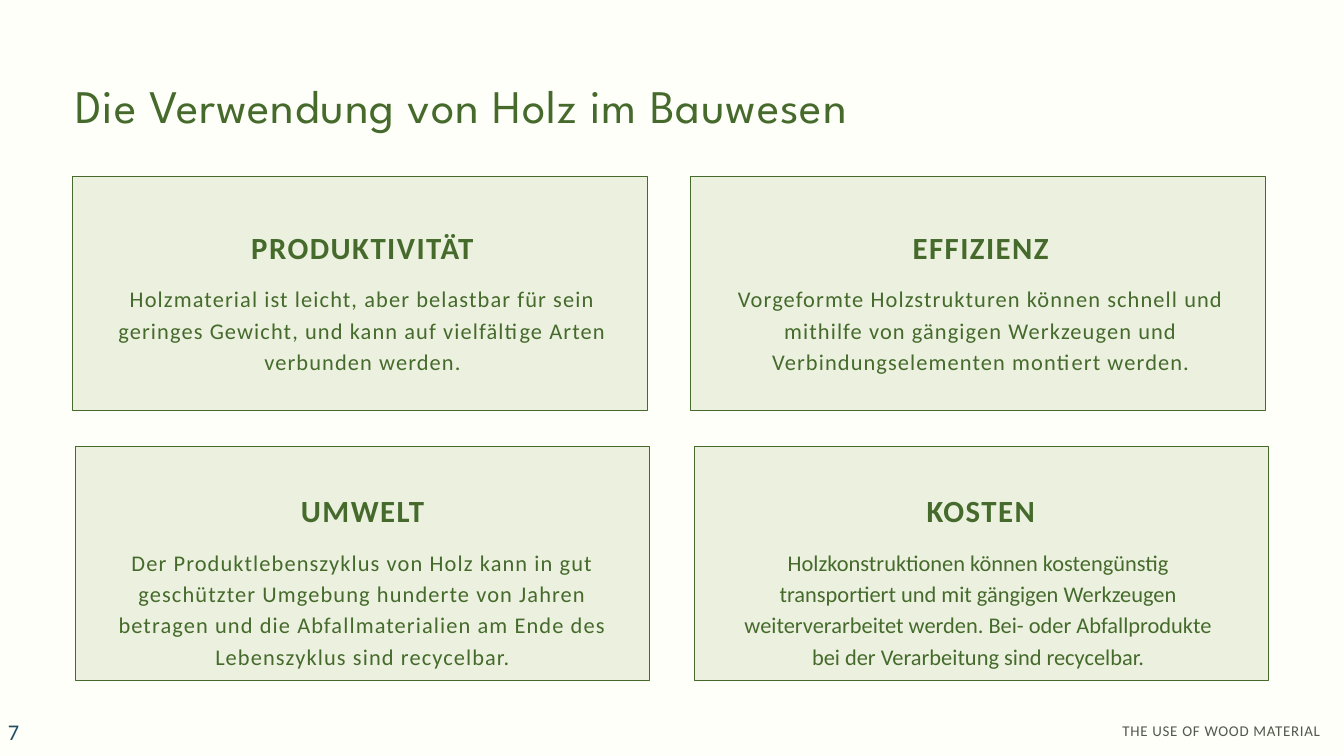
from pptx import Presentation
from pptx.dml.color import RGBColor
from pptx.enum.shapes import MSO_SHAPE
from pptx.enum.text import MSO_ANCHOR, MSO_AUTO_SIZE, PP_ALIGN
from pptx.util import Inches, Pt

RECTANGLE = MSO_SHAPE.RECTANGLE
TOP, MIDDLE = MSO_ANCHOR.TOP, MSO_ANCHOR.MIDDLE
LEFT, CENTER, RIGHT = PP_ALIGN.LEFT, PP_ALIGN.CENTER, PP_ALIGN.RIGHT
NO_AUTOSIZE = MSO_AUTO_SIZE.NONE
TITLE_ONLY = 5

COLORS = {
    "background": "FEFFF8",
    "green": "456A2C",
    "card": "EBF1DE",
    "footer": "52584D",
    "number": "1E4D65",
}
BODY_FONT = "Calibri"
TITLE_FONT = "League Spartan"

CARD_WIDTH, CARD_HEIGHT = 8.55, 3.48
TEXT_WIDTH = 7.39
HEADING_HEIGHT = 0.56
BODY_OFFSET = 0.8

CARDS = [
    {"box": (1.12, 6.64), "inset": (0.58, 0.66), "heading": "UMWELT",
     "body": "Der Produktlebenszyklus von Holz kann in gut geschützter Umgebung "
             "hunderte von Jahren betragen und die Abfallmaterialien am Ende des "
             "Lebenszyklus sind recycelbar."},
    {"box": (1.08, 2.62), "inset": (0.62, 0.76), "heading": "PRODUKTIVITÄT",
     "body": "Holzmaterial ist leicht, aber belastbar für sein geringes Gewicht, "
             "und kann auf vielfältige Arten verbunden werden."},
    {"box": (10.28, 2.62), "inset": (0.62, 0.76), "heading": "EFFIZIENZ",
     "body": "Vorgeformte Holzstrukturen können schnell und mithilfe von gängigen "
             "Werkzeugen und Verbindungselementen montiert werden."},
    {"box": (10.33, 6.64), "inset": (0.57, 0.66), "heading": "KOSTEN",
     "body": "Holzkonstruktionen können kostengünstig transportiert und mit gängigen "
             "Werkzeugen weiterverarbeitet werden. Bei- oder Abfallprodukte bei der "
             "Verarbeitung sind recycelbar.",
     "body_shift": -0.04, "body_tracking": 0},
]


def color(name):
    """Return the named colour."""
    return RGBColor.from_string(COLORS[name])


def write_text(shape, text, *, size, font=BODY_FONT, fill="green", bold=False,
               align=LEFT, anchor=TOP, leading=None, tracking=0, margins=(0, 0)):
    """Put one formatted paragraph into a shape."""
    frame = shape.text_frame
    frame.word_wrap = True
    frame.auto_size = NO_AUTOSIZE
    frame.vertical_anchor = anchor
    frame.margin_left = frame.margin_right = Inches(margins[0])
    frame.margin_top = frame.margin_bottom = Inches(margins[1])
    paragraph = frame.paragraphs[0]
    paragraph.alignment = align
    if leading:
        paragraph.line_spacing = Pt(leading)
    run = paragraph.add_run()
    run.text = text
    run.font.size = Pt(size)
    run.font.name = font
    run.font.bold = bold
    run.font.color.rgb = color(fill)
    if tracking:
        run._r.get_or_add_rPr().set("spc", str(round(tracking * 100)))


def add_text(slide, box, text, **text_format):
    """Add a text box at the given box in inches."""
    shape = slide.shapes.add_textbox(*map(Inches, box))
    write_text(shape, text, **text_format)


def place_title(slide, box):
    """Move and fill the title placeholder."""
    title = slide.shapes.title
    title.left, title.top, title.width, title.height = map(Inches, box)
    write_text(title, "Die Verwendung von Holz im Bauwesen", size=50,
               font=TITLE_FONT, leading=66.8, tracking=1)


def add_card(slide, box, inset, heading, body, body_shift=0, body_tracking=1.2):
    """Add a framed card with a heading and a body text."""
    left, top = box
    card = slide.shapes.add_shape(RECTANGLE, Inches(left), Inches(top),
                                  Inches(CARD_WIDTH), Inches(CARD_HEIGHT))
    card.shadow.inherit = False
    card.fill.solid()
    card.fill.fore_color.rgb = color("card")
    card.line.color.rgb = color("green")
    card.line.width = Pt(0.75)

    text_left, text_top = left + inset[0], top + inset[1]
    body_top = text_top + BODY_OFFSET
    body_height = top + CARD_HEIGHT - 0.15 - body_top
    add_text(slide, (text_left, text_top, TEXT_WIDTH, HEADING_HEIGHT), heading,
             size=33, bold=True, align=CENTER, leading=41.2, tracking=1.6)
    add_text(slide, (text_left + body_shift, body_top, TEXT_WIDTH, body_height), body,
             size=24, align=CENTER, leading=33.6, tracking=body_tracking)


def add_footer(slide, number_box, label_box):
    """Add the page number and the running label."""
    add_text(slide, label_box, "THE USE OF WOOD MATERIAL", size=16, fill="footer",
             align=RIGHT, leading=22.4, tracking=0.8)
    add_text(slide, number_box, "7", size=24, fill="number", anchor=MIDDLE,
             tracking=1.2, margins=(0.1, 0.05))


def main():
    """Build and save the slide."""
    presentation = Presentation()
    presentation.slide_width = Inches(20)
    presentation.slide_height = Inches(11.25)
    slide = presentation.slides.add_slide(presentation.slide_layouts[TITLE_ONLY])
    slide.background.fill.solid()
    slide.background.fill.fore_color.rgb = color("background")
    place_title(slide, (1.12, 1.05, 17.71, 0.94))
    for card in CARDS:
        add_card(slide, **card)
    add_footer(slide, (0.02, 10.69, 2.33, 0.4), (11.33, 10.7, 8.32, 0.29))
    presentation.save("out.pptx")


if __name__ == "__main__":
    main()
